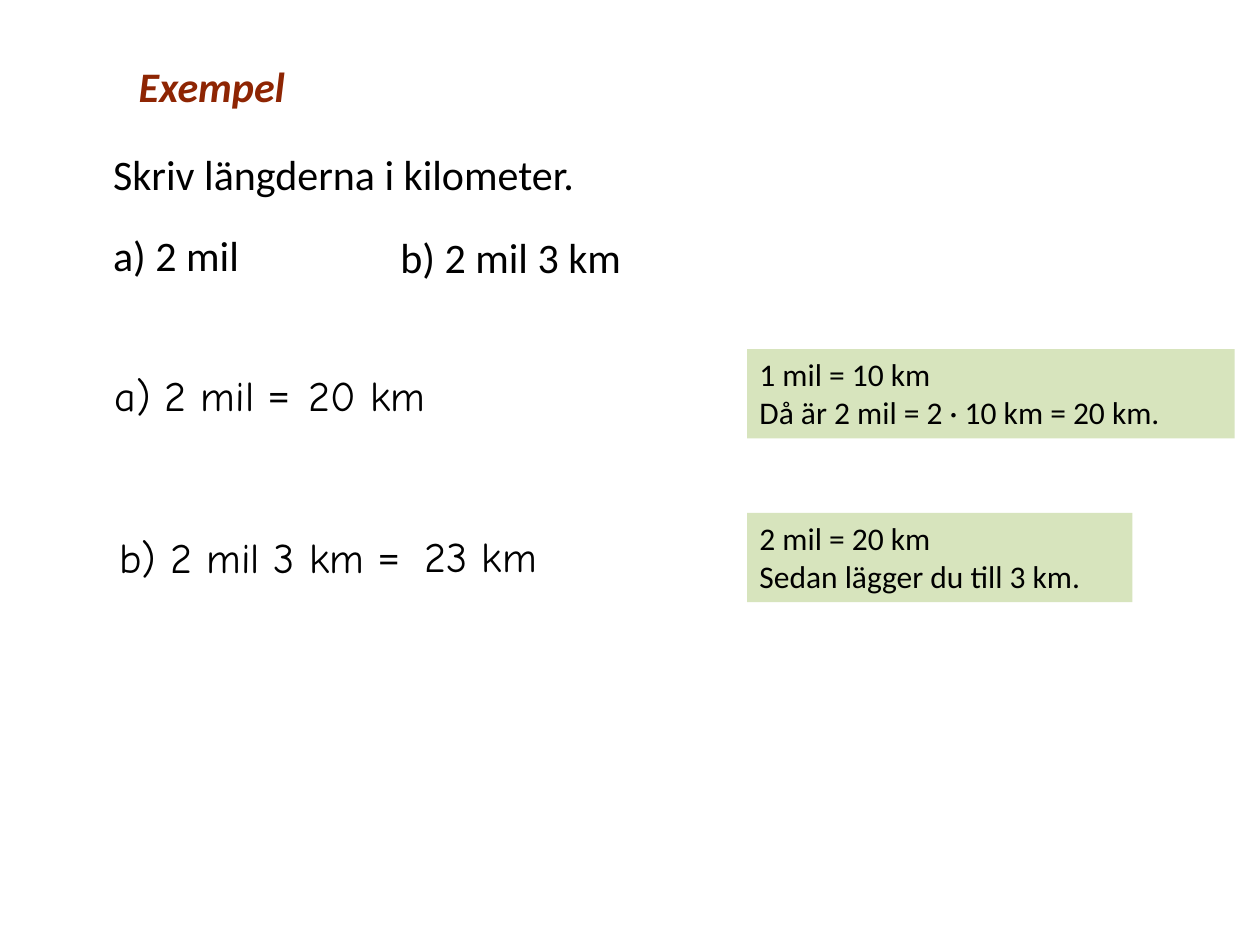
from pptx import Presentation
from pptx.dml.color import RGBColor
from pptx.enum.shapes import MSO_SHAPE as Shape
from pptx.enum.text import MSO_ANCHOR as Anchor, MSO_AUTO_SIZE as AutoSize, PP_ALIGN as Align
from pptx.util import Cm, Pt

BLACK = RGBColor(0x00, 0x00, 0x00)
RUST = RGBColor(0x8E, 0x25, 0x03)
PALE_GREEN = RGBColor(0xD7, 0xE4, 0xBD)
PRINT, HAND = "Calibri", "Comic Neue"

# Content: left, top, width in cm, then (text, font) pieces
TITLE = "Exempel"
LINES = [
    (2.03, 2.87, 12.37, [("Skriv längderna i kilometer.", PRINT)]),
    (2.03, 4.5, 3.91, [("a) 2 mil", PRINT)]),
    (7.82, 4.55, 5.46, [("b) 2 mil 3 km", PRINT)]),
    (2.06, 7.32, 4.29, [("a) 2 mil ", HAND), ("=", PRINT)]),
    (5.97, 7.32, 4.29, [("20 km", HAND)]),
    (2.16, 10.59, 6.99, [("b) 2 mil 3 km ", HAND), ("=", PRINT)]),
    (8.31, 10.57, 4.5, [("23 km", HAND)]),
]
# Explanations: top, width in cm, then paragraphs
NOTES = [
    (7.04, 9.83, ["1 mil = 10 km", "Då är 2 mil = 2 · 10 km = 20 km."]),
    (10.34, 7.77, ["2 mil = 20 km", "Sedan lägger du till 3 km."]),
]
LINE_HEIGHT, NOTE_LEFT, NOTE_HEIGHT = 1.27, 15.06, 1.8


def style(span, name, size, color=BLACK):
    span.font.name = name
    span.font.size = Pt(size)
    span.font.color.rgb = color


deck = Presentation()
deck.slide_width, deck.slide_height = Cm(25.4), Cm(19.05)
page = deck.slides.add_slide(deck.slide_layouts[5])

# Title
title = page.shapes.title
title.left, title.top, title.width, title.height = Cm(2.54), Cm(1.09), Cm(3.53), Cm(LINE_HEIGHT)
frame = title.text_frame
frame.text = TITLE
frame.word_wrap = False
frame.auto_size = AutoSize.NONE
frame.vertical_anchor = Anchor.TOP
para = frame.paragraphs[0]
para.alignment = Align.LEFT
style(para.runs[0], PRINT, 24, RUST)
para.runs[0].font.bold = para.runs[0].font.italic = True

# Task and worked answers
for left, top, width, pieces in LINES:
    box = page.shapes.add_textbox(Cm(left), Cm(top), Cm(width), Cm(LINE_HEIGHT))
    box.text_frame.word_wrap = True
    box.text_frame.auto_size = AutoSize.SHAPE_TO_FIT_TEXT
    for text, font_name in pieces:
        span = box.text_frame.paragraphs[0].add_run()
        span.text = text
        style(span, font_name, 24)

# Green explanation boxes
for top, width, texts in NOTES:
    note = page.shapes.add_shape(
        Shape.RECTANGLE, Cm(NOTE_LEFT), Cm(top), Cm(width), Cm(NOTE_HEIGHT))
    note.shadow.inherit = False
    note.fill.solid()
    note.fill.fore_color.rgb = PALE_GREEN
    note.line.fill.background()
    frame = note.text_frame
    frame.text = "\n".join(texts)
    frame.word_wrap = True
    frame.auto_size = AutoSize.SHAPE_TO_FIT_TEXT
    frame.vertical_anchor = Anchor.TOP
    for para in frame.paragraphs:
        para.alignment = Align.LEFT
        style(para.runs[0], PRINT, 18)

deck.save("out.pptx")
